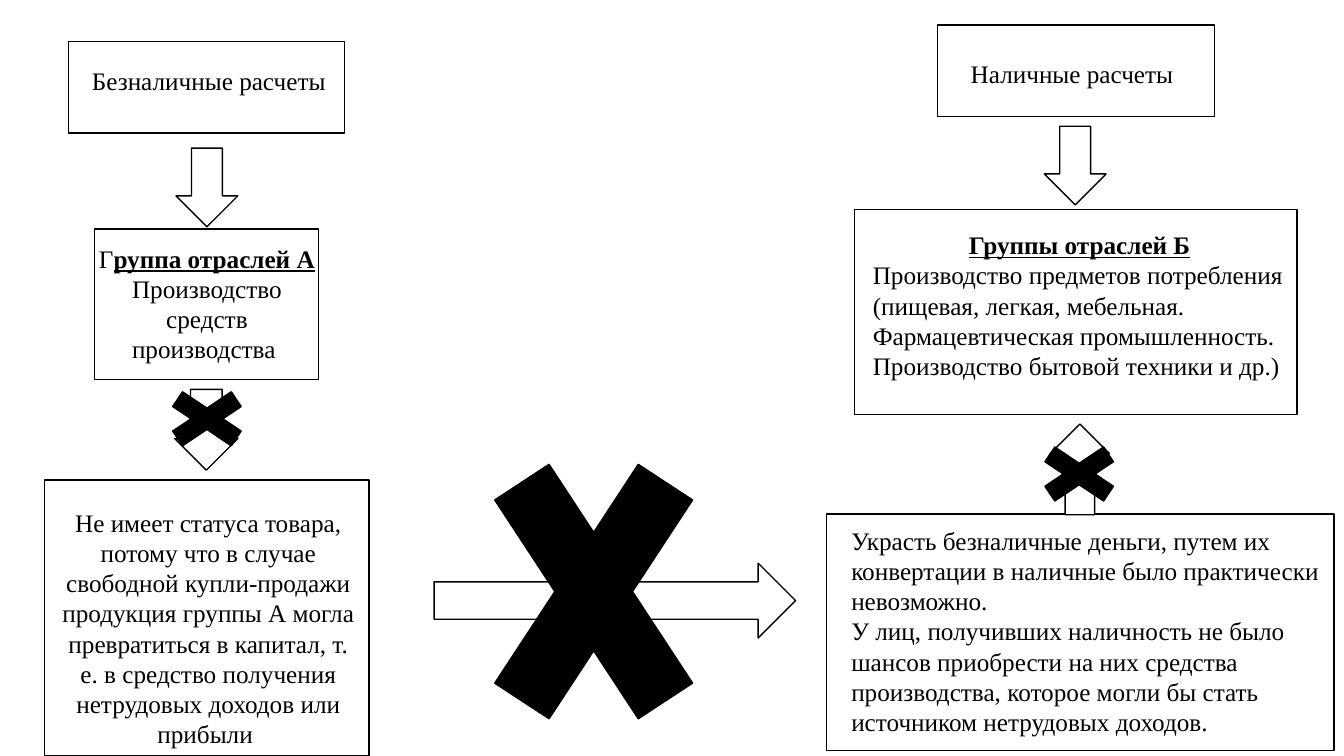
from pptx import Presentation
from pptx.dml.color import RGBColor
from pptx.enum.shapes import MSO_SHAPE as Shape
from pptx.enum.text import MSO_AUTO_SIZE as AutoSize, PP_ALIGN as Align
from pptx.util import Inches, Pt

WHITE = RGBColor(0xFF, 0xFF, 0xFF)
BLACK = RGBColor(0x00, 0x00, 0x00)
HEADING = {"bold": True, "underline": True}


class Scheme:
    """Draws on one slide; every box is (left, top, width, height) in percent of the slide."""

    font_format = {"name": "Times New Roman", "size": Pt(18)}

    def __init__(self, presentation):
        self.width = presentation.slide_width
        self.height = presentation.slide_height
        self.slide = presentation.slides.add_slide(presentation.slide_layouts[6])

    def place(self, box):
        sides = (self.width, self.height) * 2
        return [round(side * share / 100) for side, share in zip(sides, box)]

    def figure(self, kind, box, fill=WHITE):
        shape = self.slide.shapes.add_shape(kind, *self.place(box))
        shape.shadow.inherit = False
        shape.fill.solid()
        shape.fill.fore_color.rgb = fill
        shape.line.color.rgb = BLACK
        shape.line.width = Pt(1)

    def frame(self, box):
        self.figure(Shape.RECTANGLE, box)

    def cross(self, box):
        self.figure(Shape.MATH_MULTIPLY, box, BLACK)

    def text(self, box, *paragraphs):
        """Each paragraph is (alignment, run, ...), each run (wording, extra font format)."""
        frame = self.slide.shapes.add_textbox(*self.place(box)).text_frame
        frame.word_wrap = True
        frame.auto_size = AutoSize.SHAPE_TO_FIT_TEXT
        for index, (alignment, *runs) in enumerate(paragraphs):
            paragraph = frame.add_paragraph() if index else frame.paragraphs[0]
            paragraph.alignment = alignment
            for wording, extra in runs:
                run = paragraph.add_run()
                run.text = wording
                run.font.color.rgb = BLACK
                for name, value in {**self.font_format, **extra}.items():
                    setattr(run.font, name, value)


def draw_cashless_column(scheme):
    scheme.frame((5.1, 5.5, 20.55, 12.1))
    scheme.figure(Shape.DOWN_ARROW, (13.1, 19.6, 4.6, 10.4))
    scheme.frame((7.05, 30.3, 16.65, 19.9))
    scheme.figure(Shape.DOWN_ARROW, (13, 51.5, 4.7, 10.7))
    scheme.cross((11.2, 50.4, 8.4, 10))
    scheme.frame((3.3, 63.5, 24.15, 36.5))
    scheme.text((6.1, 8, 23.2, 5.4), (Align.JUSTIFY, ("Безналичные расчеты ", {})))
    scheme.text(
        (6.1, 31.5, 18.6, 17.5),
        (Align.CENTER, ("Г", {}), ("руппа отраслей А", HEADING)),
        (Align.CENTER, ("Производство средств производства ", {})),
    )
    scheme.text(
        (3.5, 66.4, 24, 33.6),
        (Align.CENTER, (
            "Не имеет статуса товара, потому что в случае свободной купли-продажи "
            "продукция группы А могла превратиться в капитал, т. е. в средство "
            "получения нетрудовых доходов или прибыли ", {})),
    )


def draw_cash_column(scheme):
    scheme.frame((69.75, 3.3, 20.6, 12.1))
    scheme.figure(Shape.DOWN_ARROW, (77.7, 16.7, 4.6, 10.4))
    scheme.frame((63.6, 27.75, 32.9, 27.1))
    scheme.frame((61.5, 68, 37.75, 31.3))
    scheme.figure(Shape.UP_ARROW, (78.15, 56.1, 4.4, 12))
    scheme.cross((76.1, 57.7, 8.4, 10))
    scheme.text((70.2, 7.1, 19.6, 5.4), (Align.CENTER, ("Наличные расчеты ", {})))
    scheme.text(
        (64.2, 29.7, 32.25, 21.5),
        (Align.CENTER, ("Группы отраслей Б", HEADING)),
        (Align.LEFT, (
            "Производство предметов потребления (пищевая, легкая, мебельная. "
            "Фармацевтическая промышленность. Производство бытовой техники и др.)", {})),
    )
    scheme.text(
        (62.6, 68.8, 39.9, 29.6),
        (Align.LEFT, (
            "Украсть безналичные деньги, путем их конвертации в наличные было "
            "практически невозможно.", {})),
        (Align.LEFT, (
            "У лиц, получивших наличность не было шансов приобрести на них средства "
            "производства, которое могли бы стать источником нетрудовых доходов.", {})),
    )


def main():
    presentation = Presentation()
    presentation.slide_width = Inches(13.33)
    presentation.slide_height = Inches(7.5)
    scheme = Scheme(presentation)
    draw_cashless_column(scheme)
    scheme.figure(Shape.RIGHT_ARROW, (32.3, 74.5, 26.9, 9.9))
    scheme.cross((33.9, 50.4, 20.55, 55.7))
    draw_cash_column(scheme)
    presentation.save("out.pptx")


if __name__ == "__main__":
    main()
